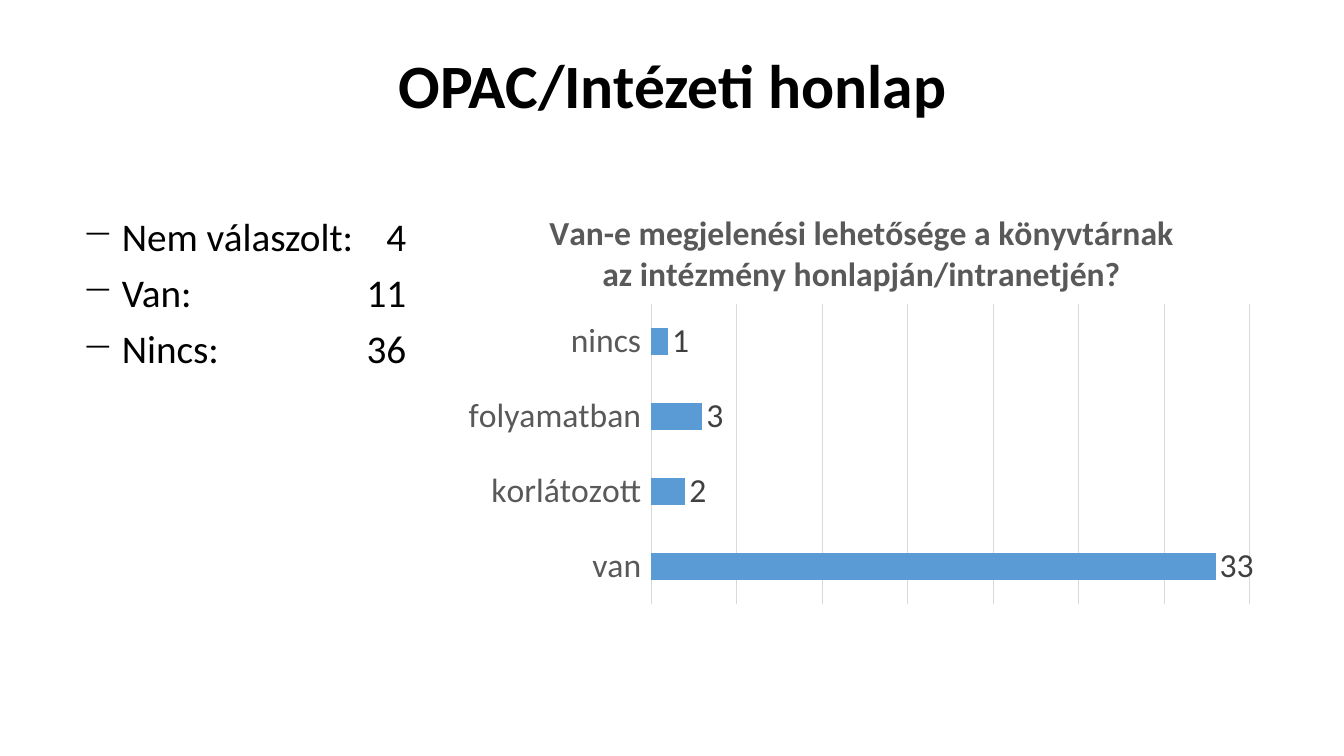
from lxml import etree
from pptx import Presentation
from pptx.chart.data import CategoryChartData
from pptx.dml.color import RGBColor
from pptx.enum.chart import XL_CHART_TYPE, XL_LABEL_POSITION, XL_TICK_LABEL_POSITION, XL_TICK_MARK
from pptx.enum.text import MSO_ANCHOR, PP_ALIGN
from pptx.oxml import parse_xml
from pptx.oxml.ns import nsdecls, qn
from pptx.util import Inches, Pt

BAR = XL_CHART_TYPE.BAR_CLUSTERED
OUT = XL_LABEL_POSITION.OUTSIDE_END
LOW = XL_TICK_LABEL_POSITION.LOW
NONE = XL_TICK_MARK.NONE
MID, TOP = MSO_ANCHOR.MIDDLE, MSO_ANCHOR.TOP
CENTER, LEFT = PP_ALIGN.CENTER, PP_ALIGN.LEFT

BLACK = RGBColor(0x00, 0x00, 0x00)
GRAY = RGBColor(0x59, 0x59, 0x59)
DARK = RGBColor(0x40, 0x40, 0x40)
PALE = RGBColor(0xD9, 0xD9, 0xD9)
BLUE = RGBColor(0x5B, 0x9B, 0xD5)
FACE = "Calibri"


def style(font, size, color=BLACK, bold=False):
    font.name, font.size, font.bold = FACE, Pt(size), bold
    font.color.rgb = color


def write(frame, lines, anchor=TOP, align=LEFT, gap=0, mark=None, tab=None, **form):
    frame.word_wrap = True
    frame.vertical_anchor = anchor
    for i, line in enumerate(lines):
        para = frame.paragraphs[0] if i == 0 else frame.add_paragraph()
        para.text = line
        para.alignment = align
        para.line_spacing = 0.9
        para.space_before = Pt(gap if i else 0)
        if mark:
            props = para._p.get_or_add_pPr()
            props.set("marL", str(Inches(0.39)))
            props.set("indent", str(-Inches(0.39)))
            etree.SubElement(props, qn("a:buChar"), char=mark)
            tabs = etree.SubElement(props, qn("a:tabLst"))
            etree.SubElement(tabs, qn("a:tab"), pos=str(Inches(tab)), algn="r")
        style(para.font, **form)


class Deck:
    def __init__(self, width, height):
        self.file = Presentation()
        self.file.slide_width = self.width = Inches(width)
        self.file.slide_height = self.height = Inches(height)
        self.slide = self.file.slides.add_slide(self.file.slide_layouts[5])

    def place(self, x, y, w, h):
        return [int(self.width * x), int(self.height * y),
                int(self.width * w), int(self.height * h)]

    def title(self, text, area):
        shape = self.slide.shapes.title
        shape.left, shape.top, shape.width, shape.height = self.place(*area)
        write(shape.text_frame, [text], anchor=MID, align=CENTER, size=44, bold=True)

    def items(self, lines, area):
        box = self.slide.shapes.add_textbox(*self.place(*area))
        write(box.text_frame, lines, gap=10, mark="−", tab=3.39, size=28)

    def bars(self, title, values, area, plot_area):
        data = CategoryChartData()
        data.categories = list(values)
        data.add_series("Series 1", list(values.values()))
        chart = self.slide.shapes.add_chart(BAR, *self.place(*area), data).chart
        style(chart.font, 10)
        chart.has_legend = False
        chart.has_title = True
        head = chart.chart_title
        head.include_in_layout = False
        para = head.text_frame.paragraphs[0]
        para.text = title
        style(para.runs[0].font, 24, GRAY, True)

        names = chart.category_axis
        names.major_tick_mark = names.minor_tick_mark = NONE
        names.tick_label_position = LOW
        names.has_major_gridlines = False
        style(names.tick_labels.font, 24, GRAY)
        scale = chart.value_axis
        scale.visible = False
        scale.minimum_scale, scale.maximum_scale, scale.major_unit = 0, 35, 5
        scale.has_major_gridlines = True
        for line in (names.format.line, scale.major_gridlines.format.line):
            line.color.rgb = PALE
            line.width = Pt(0.75)

        plot = chart.plots[0]
        plot.gap_width = 182
        plot.vary_by_categories = False
        fill = plot.series[0].format.fill
        fill.solid()
        fill.fore_color.rgb = BLUE
        plot.has_data_labels = True
        labels = plot.data_labels
        labels.show_value = True
        labels.position = OUT
        style(labels.font, 24, DARK)
        self.fit(chart, plot_area)

    def fit(self, chart, area):
        parts = "".join(f'<c:{key}Mode val="edge"/>' for key in "xy")
        parts += "".join(f'<c:{key} val="{val}"/>' for key, val in zip("xywh", area))
        layout = parse_xml(
            f'<c:layout {nsdecls("c")}><c:manualLayout><c:layoutTarget val="inner"/>'
            f'{parts}</c:manualLayout></c:layout>')
        frame = chart._chartSpace.find(f'.//{qn("c:plotArea")}')
        for old in frame.findall(qn("c:layout")):
            frame.remove(old)
        frame.insert(0, layout)

    def save(self):
        self.file.save("out.pptx")


def main():
    deck = Deck(13.33, 7.5)
    deck.title("OPAC/Intézeti honlap", (0.069, 0.053, 0.863, 0.127))
    deck.bars(
        "Van-e megjelenési lehetősége a könyvtárnak az intézmény honlapján/intranetjén?",
        {"van": 33, "korlátozott": 2, "folyamatban": 3, "nincs": 1},
        (0.34, 0.251, 0.602, 0.559), (0.24, 0.27, 0.74, 0.71))
    deck.items(["Nem válaszolt:\t4", "Van:\t11", "Nincs:\t36"],
               (0.054, 0.281, 0.285, 0.236))
    deck.save()


if __name__ == "__main__":
    main()
